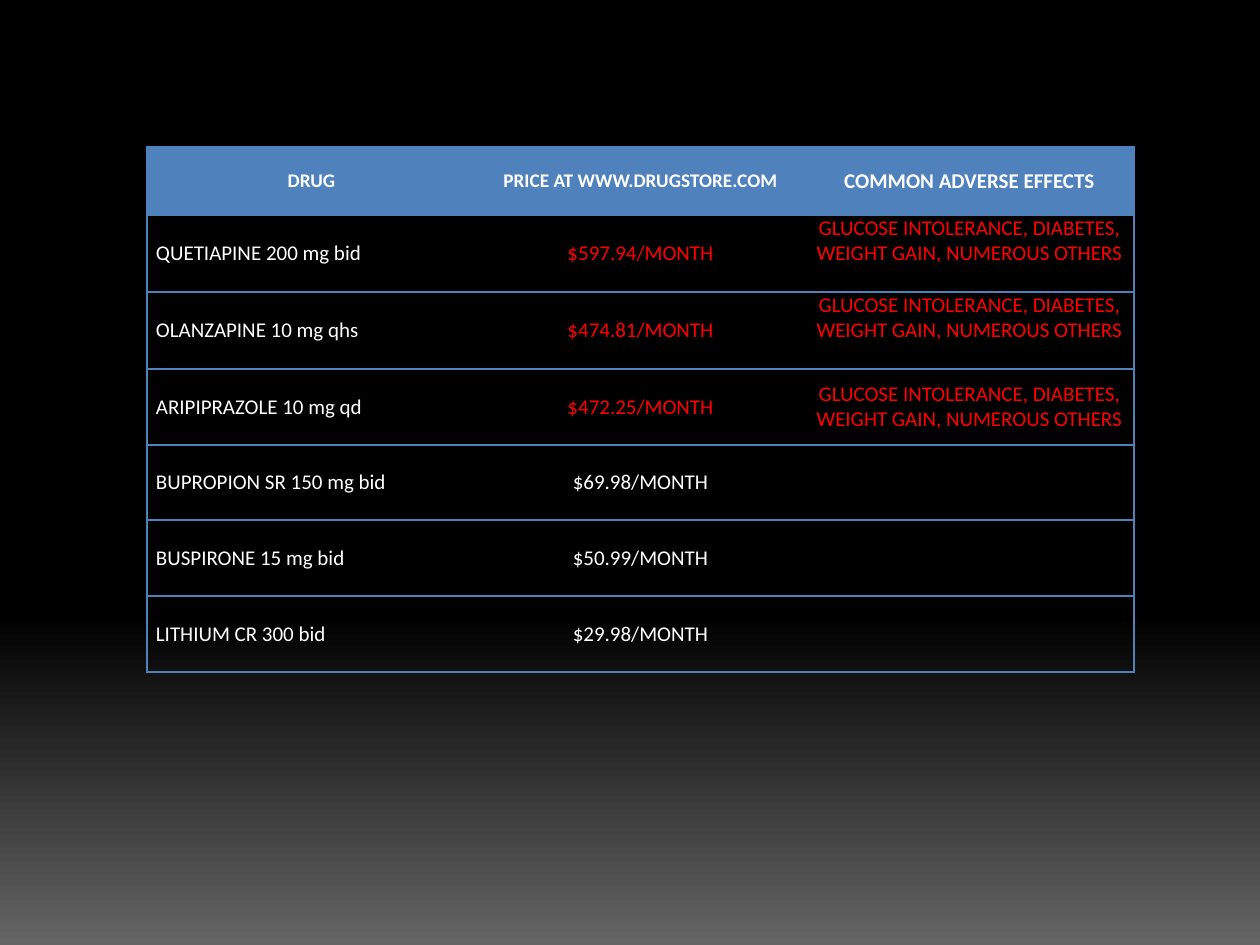
"""Build a slide with a table of drug prices and common adverse effects."""
from copy import deepcopy

from lxml import etree
from pptx import Presentation, util as u
from pptx.dml.color import RGBColor
from pptx.enum import text
from pptx.oxml.ns import qn

COLORS = {"black": "000000", "gray": "656565", "blue": "4F81BD",
          "white": "FFFFFF", "red": "FF0000"}
EFFECTS = "GLUCOSE INTOLERANCE, DIABETES, WEIGHT GAIN, NUMEROUS OTHERS"
HEADER = ("DRUG", "PRICE AT WWW.DRUGSTORE.COM", "COMMON ADVERSE EFFECTS")
DRUGS = [
    ("QUETIAPINE 200 mg bid", "$597.94/MONTH", EFFECTS),
    ("OLANZAPINE 10 mg qhs", "$474.81/MONTH", EFFECTS),
    ("ARIPIPRAZOLE 10 mg qd", "$472.25/MONTH", EFFECTS),
    ("BUPROPION SR 150 mg bid", "$69.98/MONTH", ""),
    ("BUSPIRONE 15 mg bid", "$50.99/MONTH", ""),
    ("LITHIUM CR 300 bid", "$29.98/MONTH", ""),
]
HEADER_SIZES = (11, 11, 12)
BODY_SIZE = 12
LEFT, TOP, COL_W = 147, 147, 329
ROW_HEIGHTS = [68, 77, 77, 76, 75, 76, 76]
INSET, RAISED_INSET, RAISED_ROWS = 9, 25, (1, 2)
PLAIN_STYLE = "{2D5ABB26-0587-4C30-8999-92F81FD0307C}"


def px(n):
    return u.Emu(round(n * 914400 / 126))


def rgb(name):
    return RGBColor.from_string(COLORS[name])


def paint_background(s):
    fill = s.background.fill
    fill.gradient()
    fill.gradient_angle = 270
    first, last = fill.gradient_stops
    first.color.rgb, first.position = rgb("black"), 0
    last.color.rgb, last.position = rgb("gray"), 1
    stops = s.element.find(".//" + qn("a:gsLst"))
    middle = deepcopy(stops[0])
    middle.set("pos", "65000")
    stops.insert(1, middle)


def add_borders(cell, sides):
    tcPr = cell._tc.get_or_add_tcPr()
    for side in sides:
        ln = etree.SubElement(tcPr, qn("a:ln" + side), w=str(u.Pt(1)))
        fill = etree.SubElement(ln, qn("a:solidFill"))
        etree.SubElement(fill, qn("a:srgbClr"), val=COLORS["blue"])


def format_cell(cell, row, col, value):
    header = row == 0
    add_borders(cell, ("LTB", "TB", "RTB")[col])
    if header:
        cell.fill.solid()
        cell.fill.fore_color.rgb = rgb("blue")
    else:
        cell.fill.background()
    cell.vertical_anchor = text.MSO_ANCHOR.MIDDLE
    cell.margin_left = cell.margin_right = px(INSET)
    cell.margin_top = 0
    cell.margin_bottom = px(RAISED_INSET if col == 2 and row in RAISED_ROWS else 0)
    cell.text_frame.text = value
    p = cell.text_frame.paragraphs[0]
    p.alignment = text.PP_ALIGN.CENTER if header or col else text.PP_ALIGN.LEFT
    p.font.size = u.Pt(BODY_SIZE)
    for r in p.runs:
        r.font.name = "Calibri"
        r.font.size = u.Pt(HEADER_SIZES[col] if header else BODY_SIZE)
        r.font.bold = header
        costly = not header and col and DRUGS[row - 1][2]
        r.font.color.rgb = rgb("red" if costly else "white")


def add_price_table(s):
    rows = [HEADER] + DRUGS
    frame = s.shapes.add_table(len(rows), len(HEADER), px(LEFT), px(TOP),
                               px(COL_W * len(HEADER)), px(sum(ROW_HEIGHTS)))
    table = frame.table
    table.horz_banding = False
    table._tbl.tblPr.find(qn("a:tableStyleId")).text = PLAIN_STYLE
    for column in table.columns:
        column.width = px(COL_W)
    for i, (values, height) in enumerate(zip(rows, ROW_HEIGHTS)):
        table.rows[i].height = px(height)
        for j, value in enumerate(values):
            format_cell(table.cell(i, j), i, j, value)


def main():
    prs = Presentation()
    prs.slide_width, prs.slide_height = px(1260), px(945)
    s = prs.slides.add_slide(prs.slide_layouts[6])
    paint_background(s)
    add_price_table(s)
    prs.save("out.pptx")


if __name__ == "__main__":
    main()
